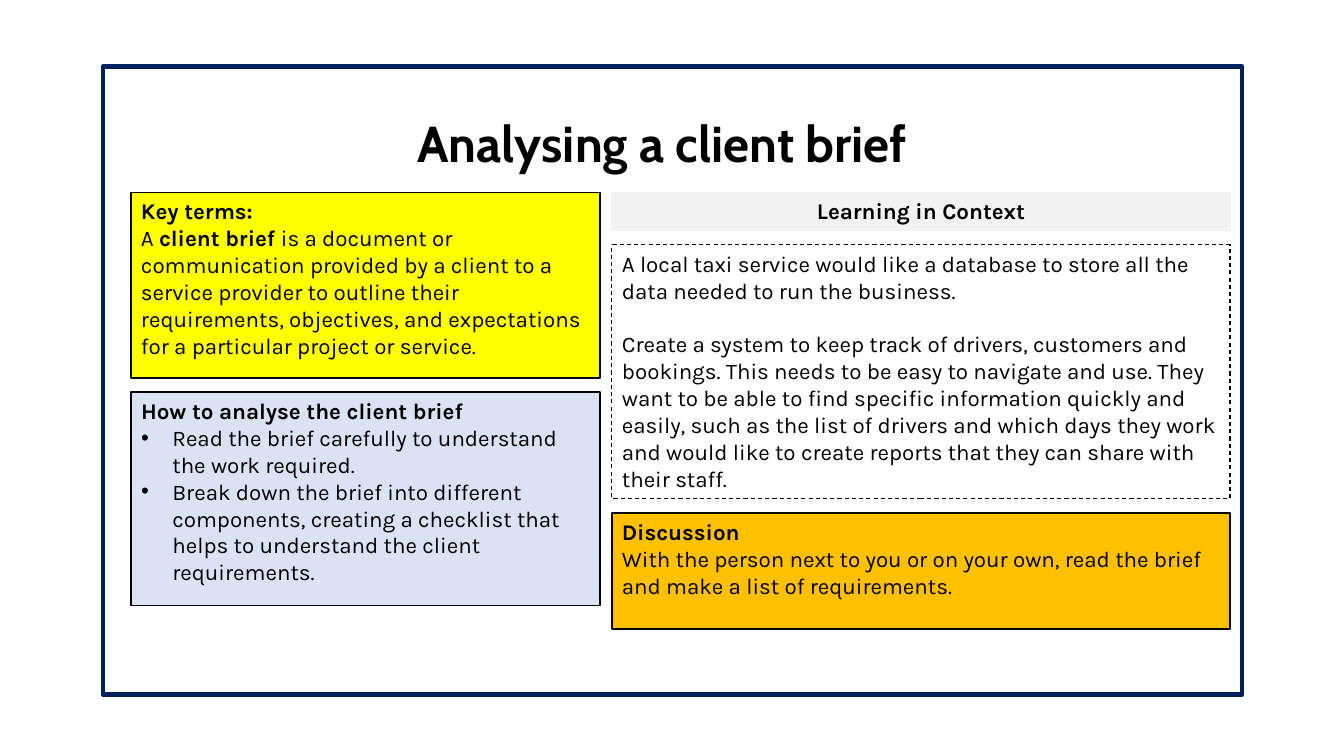
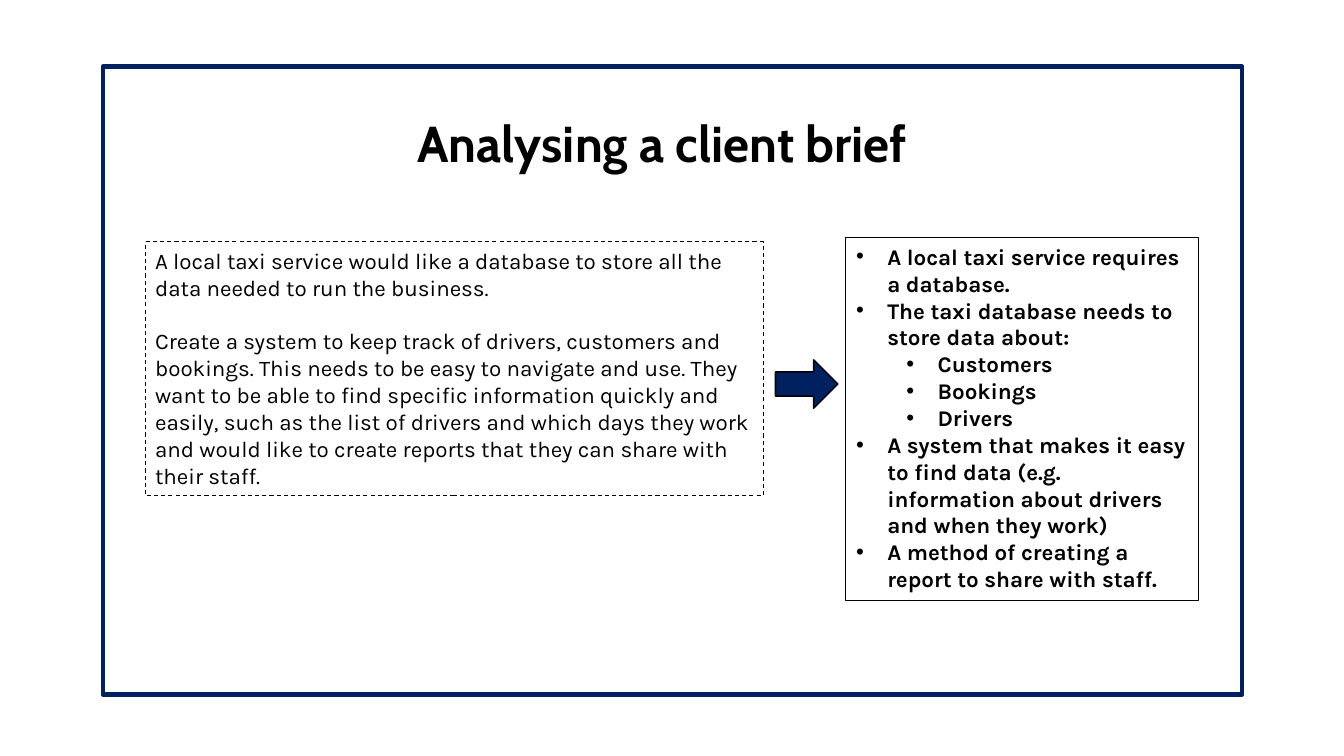
from dataclasses import dataclass

from lxml.etree import SubElement
from pptx import Presentation
from pptx.dml.color import RGBColor
from pptx.enum.dml import MSO_LINE_DASH_STYLE as Dash
from pptx.enum.shapes import MSO_SHAPE as Preset
from pptx.enum.text import MSO_ANCHOR as Anchor
from pptx.enum.text import MSO_AUTO_SIZE as AutoSize
from pptx.enum.text import PP_ALIGN as Align
from pptx.oxml.ns import qn
from pptx.util import Inches, Pt

BLACK = RGBColor(0x00, 0x00, 0x00)
WHITE = RGBColor(0xFF, 0xFF, 0xFF)
NAVY = RGBColor(0x00, 0x20, 0x60)
YELLOW = RGBColor(0xFF, 0xFF, 0x00)
PALE_BLUE = RGBColor(0xDA, 0xE3, 0xF3)
GREY = RGBColor(0xF2, 0xF2, 0xF2)
AMBER = RGBColor(0xFF, 0xC0, 0x00)

TITLE_FONT, BODY_FONT = "Cabin", "Karla"
TITLE_SIZE, BODY_SIZE = Pt(36), Pt(16)
PARAGRAPH_GAP = Pt(19.2)
CELL = Inches(0.1)
HANG, LEVEL_STEP = Inches(0.31), Inches(0.5)
CONTENT_LAYOUT = 1


@dataclass
class Box:
    column: float
    row: float
    columns: float
    rows: float

    def place(self):
        return [round(value * CELL) for value in
                (self.column, self.row, self.columns, self.rows)]


@dataclass
class Line:
    text: str
    level: int = 0
    bullet: bool = False
    before: int = 0
    align: Align = Align.LEFT


FRAME = Box(10.2, 6.6, 113, 62.3)
TITLE = Box(13, 10.6, 105.4, 7.1)
BRIEF_SIZE = (61.3, 25.2)

BRIEF = [
    Line("A local taxi service would like a database to store all the data "
         "needed to run the business."),
    Line("Create a system to keep track of drivers, customers and bookings. "
         "This needs to be easy to navigate and use. They want to be able to "
         "find specific information quickly and easily, such as the list of "
         "drivers and which days they work", before=PARAGRAPH_GAP),
    Line("and would like to create reports that they can share with their staff."),
]
KEY_TERMS = [
    Line("*Key terms:*"),
    Line("A *client brief *is a document or communication provided by a client "
         "to a service provider to outline their requirements, objectives, and "
         "expectations for a particular project or service."),
]
HOW_TO = [
    Line("*How to analyse the client brief*"),
    Line("Read the brief carefully to understand the work required.", bullet=True),
    Line("Break down the brief into different components, creating a checklist "
         "that helps to understand the client requirements.", bullet=True),
]
CONTEXT = [Line("*Learning in Context*", align=Align.CENTER)]
DISCUSSION = [
    Line("*Discussion*"),
    Line("With the person next to you or on your own, read the brief and make "
         "a list of requirements."),
]
REQUIREMENTS = [
    Line(f"*{text}*", level, bullet=True) for level, text in (
        (0, "A local taxi service requires a database."),
        (0, "The taxi database needs to store data about:"),
        (1, "Customers"),
        (1, "Bookings"),
        (1, "Drivers"),
        (0, "A system that makes it easy to find data (e.g. information about "
            "drivers and when they work)"),
        (0, "A method of creating a report to share with staff."),
    )
]


def stack(column, row, columns, heights, gap):
    boxes = []
    for rows in heights:
        boxes.append(Box(column, row, columns, rows))
        row += rows + gap
    return boxes


def paint(shape, fill, line, width, dash=None):
    if fill is None:
        shape.fill.background()
    else:
        shape.fill.solid()
        shape.fill.fore_color.rgb = fill
    shape.line.color.rgb = line
    shape.line.width = Pt(width)
    if dash:
        shape.line.dash_style = dash


def add_preset(page, box, preset, fill, line=BLACK, width=1, dash=None):
    shape = page.shapes.add_shape(preset, *box.place())
    shape.shadow.inherit = False
    paint(shape, fill, line, width, dash)
    return shape


def set_bullet(para, line):
    props = para._p.get_or_add_pPr()
    if line.bullet:
        props.set("marL", str(HANG + line.level * LEVEL_STEP))
        props.set("indent", str(-HANG))
        SubElement(props, qn("a:buFont"), typeface="Arial")
        SubElement(props, qn("a:buChar"), char="•")
    else:
        props.set("marL", "0")
        props.set("indent", "0")
        SubElement(props, qn("a:buNone"))


def style_font(font, name, size, bold):
    font.name = name
    font.size = size
    font.bold = bold
    font.color.rgb = BLACK


def write(shape, lines):
    frame = shape.text_frame
    frame.word_wrap = True
    frame.auto_size = AutoSize.NONE
    frame.vertical_anchor = Anchor.TOP
    for index, line in enumerate(lines):
        para = frame.add_paragraph() if index else frame.paragraphs[0]
        para.level = line.level
        para.alignment = line.align
        set_bullet(para, line)
        para.space_before = line.before
        for part, text in enumerate(line.text.split("*")):
            if text:
                span = para.add_run()
                span.text = text
                style_font(span.font, BODY_FONT, BODY_SIZE, part % 2 == 1)


def add_panel(page, box, lines, fill=None, line=BLACK, width=1, dash=None):
    write(add_preset(page, box, Preset.RECTANGLE, fill, line, width, dash), lines)


def add_brief(page, box):
    add_panel(page, box, BRIEF, width=0.75, dash=Dash.DASH)


def move(shape, box):
    shape.left, shape.top, shape.width, shape.height = box.place()


def fill_body(page, box, lines, fill=None, width=1):
    body = page.placeholders[1]
    move(body, box)
    paint(body, fill, BLACK, width)
    write(body, lines)


def add_page(deck):
    page = deck.slides.add_slide(deck.slide_layouts[CONTENT_LAYOUT])
    title = page.shapes.title
    frame = add_preset(page, FRAME, Preset.RECTANGLE, WHITE, NAVY, 3)
    title.element.addprevious(frame.element)
    move(title, TITLE)
    title.text_frame.text = "Analysing a client brief"
    title.text_frame.auto_size = AutoSize.NONE
    para = title.text_frame.paragraphs[0]
    para.alignment = Align.CENTER
    style_font(para.runs[0].font, TITLE_FONT, TITLE_SIZE, True)
    return page


def build_lesson(deck):
    page = add_page(deck)
    width, height = BRIEF_SIZE
    terms, method = stack(13, 19.1, 46.5, (18.4, 21.2), 1.4)
    heading, brief, task = stack(60.7, 19.1, width, (3.8, height, 11.5), 1.4)
    add_panel(page, terms, KEY_TERMS, YELLOW)
    fill_body(page, method, HOW_TO, PALE_BLUE)
    add_panel(page, heading, CONTEXT, GREY, GREY)
    add_brief(page, brief)
    add_panel(page, task, DISCUSSION, AMBER)


def build_answer(deck):
    page = add_page(deck)
    add_brief(page, Box(14.4, 24, *BRIEF_SIZE))
    add_preset(page, Box(76.9, 35.7, 6.2, 4.8), Preset.RIGHT_ARROW, NAVY)
    fill_body(page, Box(83.9, 23.6, 35, 36), REQUIREMENTS, width=0.75)


def main():
    deck = Presentation()
    deck.slide_width = Inches(13.33)
    deck.slide_height = Inches(7.5)
    build_lesson(deck)
    build_answer(deck)
    deck.save("out.pptx")


if __name__ == "__main__":
    main()
